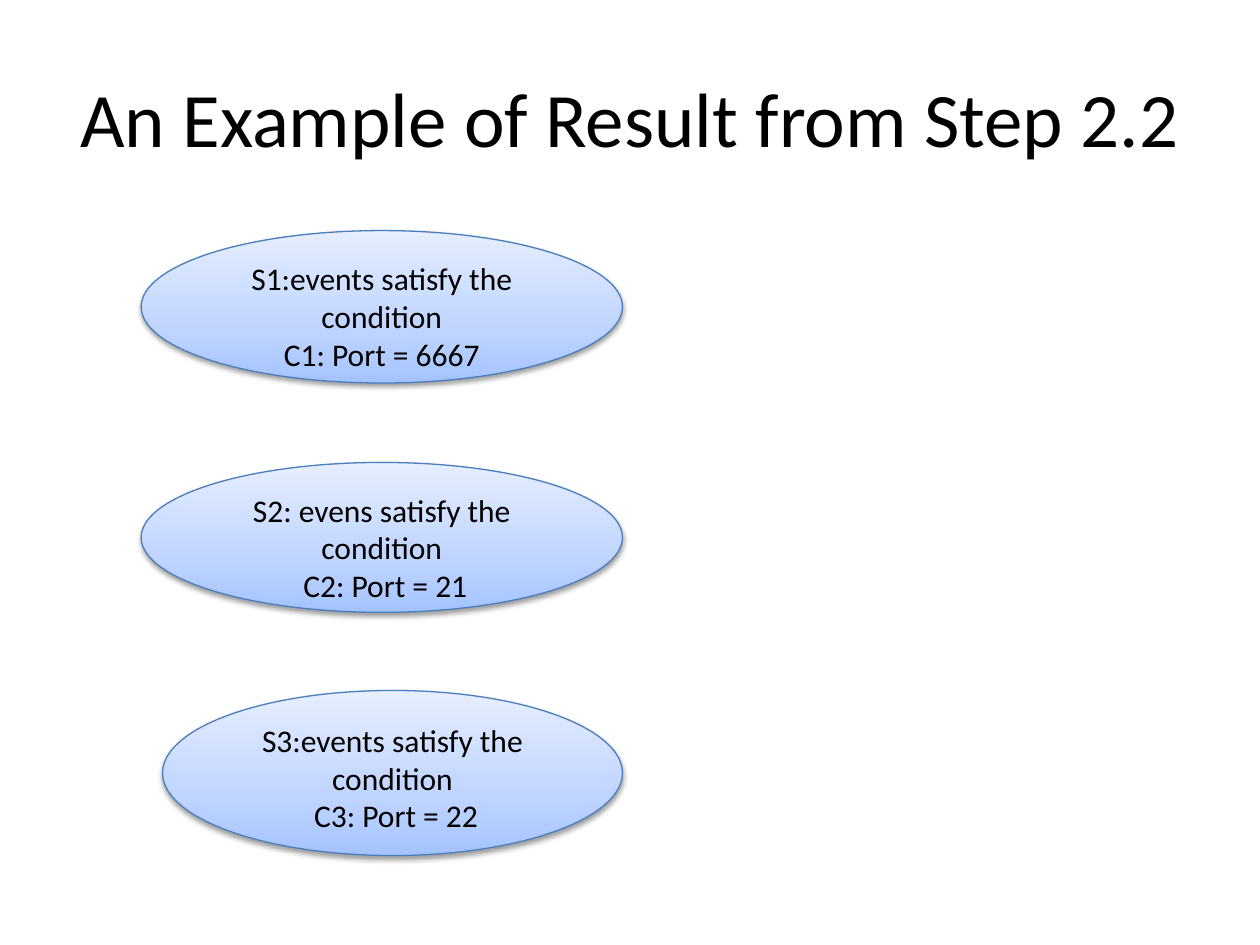
from lxml import etree
from pptx import Presentation
from pptx.dml.color import RGBColor
from pptx.enum.shapes import MSO_SHAPE
from pptx.enum.text import MSO_ANCHOR, PP_ALIGN
from pptx.oxml.ns import qn
from pptx.util import Inches, Pt

OVAL = MSO_SHAPE.OVAL
TOP, MIDDLE = MSO_ANCHOR.TOP, MSO_ANCHOR.MIDDLE
CENTER = PP_ALIGN.CENTER

STOPS = [(0, "A4C4FF"), (35, "BFD4FF"), (100, "E6EEFF")]
STATES = [
    (1.12, 1.83, 3.82, 1.21, "S1:events satisfy the condition", "C1: Port = 6667"),
    (1.12, 3.67, 3.82, 1.19, "S2: evens satisfy the condition", " C2: Port = 21"),
    (1.29, 5.48, 3.65, 1.31, "S3:events satisfy the condition", " C3: Port = 22"),
]


def color(value):
    return RGBColor.from_string(value)


def write(tf, lines, size, anchor):
    tf.word_wrap = True
    tf.vertical_anchor = anchor
    tf.text = "\n".join(lines)
    for p in tf.paragraphs:
        p.alignment = CENTER
        for r in p.runs:
            r.font.name = "Calibri"
            r.font.size = Pt(size)
            r.font.color.rgb = color("000000")


prs = Presentation()
prs.slide_width, prs.slide_height = Inches(10), Inches(7.5)
s = prs.slides.add_slide(prs.slide_layouts[6])

title = s.shapes.add_textbox(Inches(0.5), Inches(0.3), Inches(9), Inches(1.25))
write(title.text_frame, ["An Example of Result from Step 2.2"], 44, MIDDLE)

for left, top, width, height, state, condition in STATES:
    sp = s.shapes.add_shape(OVAL, Inches(left), Inches(top), Inches(width), Inches(height))
    sp.line.color.rgb = color("4B7EBC")
    sp.line.width = Pt(0.75)

    sp.fill.gradient()
    sp.fill.gradient_angle = 90
    stops = sp._element.spPr.find(".//" + qn("a:gsLst"))
    for stop in list(stops):
        stops.remove(stop)
    for position, value in STOPS:
        stop = etree.SubElement(stops, qn("a:gs"), pos=str(position * 1000))
        etree.SubElement(stop, qn("a:srgbClr"), val=value)

    sp.shadow.inherit = False
    effects = sp._element.spPr.find(qn("a:effectLst"))
    shadow = etree.SubElement(effects, qn("a:outerShdw"), blurRad=str(Pt(3.1)),
                              dist=str(Pt(1.6)), dir="5400000", rotWithShape="0")
    black = etree.SubElement(shadow, qn("a:srgbClr"), val="000000")
    etree.SubElement(black, qn("a:alpha"), val="38000")

    write(sp.text_frame, [state, condition], 18, TOP)

prs.save("out.pptx")
